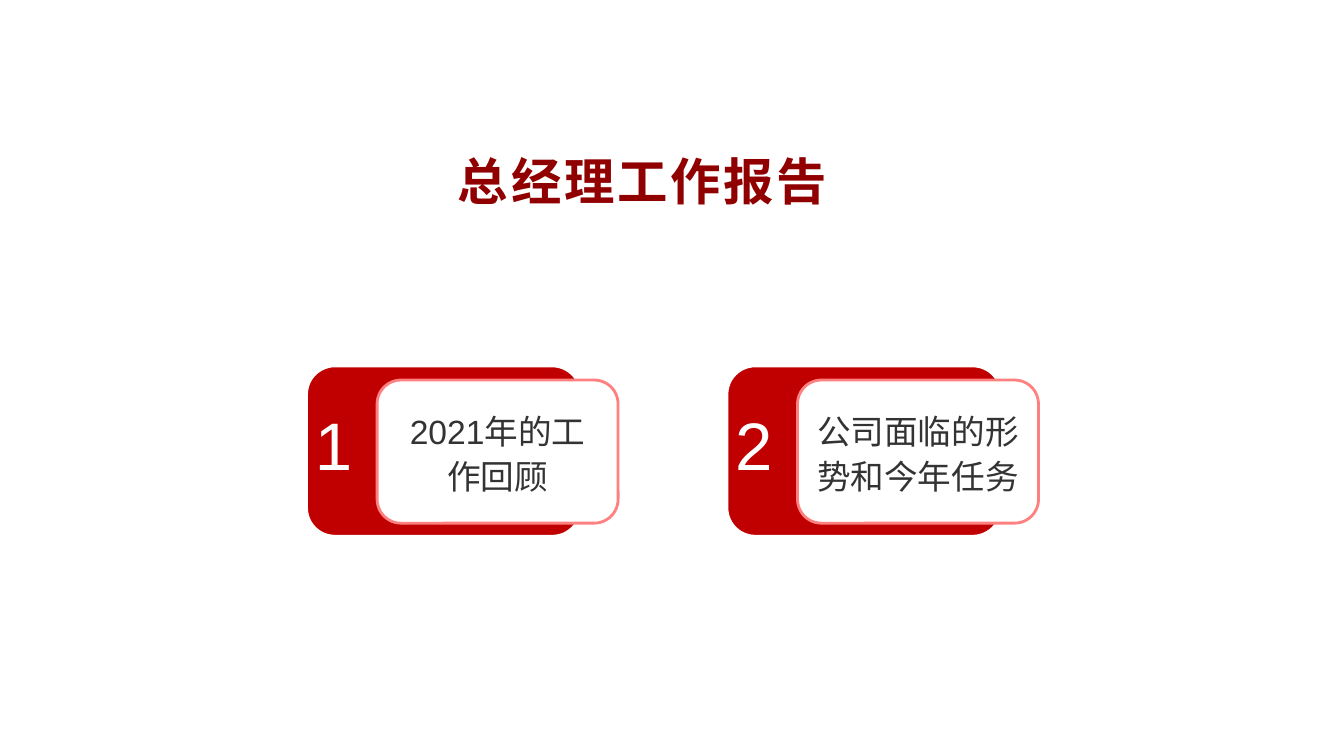
from dataclasses import dataclass

from pptx import Presentation
from pptx.dml.color import RGBColor
from pptx.enum.shapes import MSO_SHAPE
from pptx.enum.text import MSO_ANCHOR, PP_ALIGN
from pptx.util import Inches, Pt

ROUNDED = MSO_SHAPE.ROUNDED_RECTANGLE
MIDDLE = MSO_ANCHOR.MIDDLE
LEFT, CENTER = PP_ALIGN.LEFT, PP_ALIGN.CENTER


@dataclass(frozen=True)
class Theme:
    """Colours, font and type sizes of the agenda."""

    font: str = "Arial"
    title: str = "900000"
    accent: str = "C00000"
    border: str = "FF8080"
    body: str = "333333"
    white: str = "FFFFFF"
    title_size: int = 36
    number_size: int = 48
    body_size: int = 24
    line_width: int = 2


class AgendaSlide:
    """Draws the elements of the agenda on one slide."""

    def __init__(self, page, theme):
        self.page = page
        self.theme = theme

    def label(self, shape, text, size, color, align, inset=0.0, spacing=1.0):
        """Put one formatted paragraph into a shape."""
        frame = shape.text_frame
        frame.text = text
        frame.word_wrap = True
        frame.vertical_anchor = MIDDLE
        frame.margin_left = frame.margin_right = Inches(inset)
        frame.margin_top = frame.margin_bottom = Inches(inset / 2)
        para = frame.paragraphs[0]
        para.alignment = align
        para.line_spacing = spacing
        span = para.runs[0]
        span.font.name = self.theme.font
        span.font.size = Pt(size)
        span.font.color.rgb = RGBColor.from_string(color)
        return span

    def title(self, text):
        """Add the bold, letter-spaced heading."""
        box = self.page.shapes.add_textbox(
            Inches(3.63), Inches(1.17), Inches(5.49), Inches(1.23))
        span = self.label(
            box, text, self.theme.title_size, self.theme.title, CENTER)
        span.font.bold = True
        span.font._element.set("spc", "200")

    def panel(self, left, top, width, height, fill, line):
        """Add a rounded rectangle with an outline."""
        shape = self.page.shapes.add_shape(
            ROUNDED, Inches(left), Inches(top), Inches(width), Inches(height))
        shape.shadow.inherit = False
        shape.fill.solid()
        shape.fill.fore_color.rgb = RGBColor.from_string(fill)
        shape.line.color.rgb = RGBColor.from_string(line)
        shape.line.width = Pt(self.theme.line_width)
        return shape

    def item(self, left, number, text):
        """Add a numbered red panel with a white card over it."""
        theme = self.theme
        back = self.panel(left, 3.63, 2.72, 1.69, theme.accent, theme.white)
        self.label(back, str(number), theme.number_size, theme.white, LEFT,
                   spacing=0.8)
        card = self.panel(left + 0.7, 3.77, 2.39, 1.42, theme.white, theme.border)
        self.label(card, text, theme.body_size, theme.body, CENTER,
                   inset=0.1, spacing=1.1)


def main():
    """Build and save the deck."""
    deck = Presentation()
    deck.slide_width = Inches(13.33)
    deck.slide_height = Inches(7.5)
    page = deck.slides.add_slide(deck.slide_layouts[6])
    agenda = AgendaSlide(page, Theme())
    agenda.title("总经理工作报告")
    topics = ["2021年的工作回顾", "公司面临的形势和今年任务"]
    for index, topic in enumerate(topics):
        agenda.item(3.04 + index * 4.17, index + 1, topic)
    deck.save("out.pptx")


if __name__ == "__main__":
    main()
